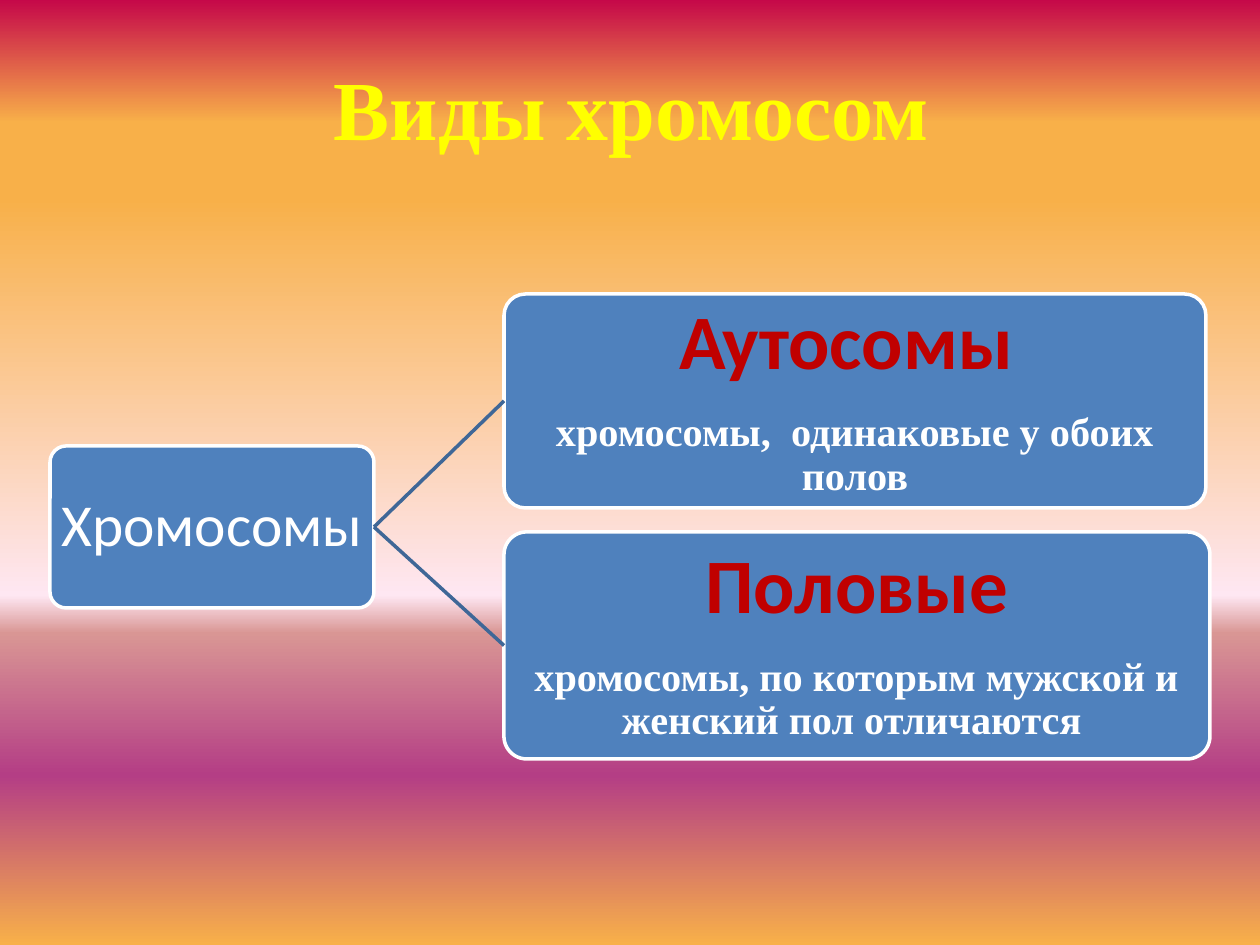
from lxml.etree import SubElement
from pptx import Presentation
from pptx.dml.color import RGBColor
from pptx.enum.shapes import MSO_CONNECTOR, MSO_SHAPE
from pptx.enum.text import MSO_ANCHOR, PP_ALIGN
from pptx.oxml.ns import qn
from pptx.util import Pt

EMU_PER_PX = 914400 / 126
WHITE = RGBColor(0xFF, 0xFF, 0xFF)
BLUE = RGBColor(0x4F, 0x81, 0xBD)
LINK_BLUE = RGBColor(0x3F, 0x67, 0x97)
RED = RGBColor(0xC0, 0x00, 0x00)
YELLOW = RGBColor(0xFF, 0xFF, 0x00)
SUNSET = [
    (0, RGBColor(0xFC, 0x9F, 0xCB)),
    (0, RGBColor(0xC5, 0x08, 0x49)),
    (13, RGBColor(0xF8, 0xB0, 0x49)),
    (21, RGBColor(0xF8, 0xB0, 0x49)),
    (63, RGBColor(0xFE, 0xE7, 0xF2)),
    (67, RGBColor(0xD9, 0x96, 0x94)),
    (82, RGBColor(0xB4, 0x3E, 0x85)),
    (100, RGBColor(0xF8, 0xB0, 0x49)),
]
SANS = "Calibri"
SERIF = "Times New Roman"


def px(length):
    return round(length * EMU_PER_PX)


def write(paragraph, text, size, font=SANS, color=WHITE, bold=False):
    paragraph.alignment = PP_ALIGN.CENTER
    run = paragraph.add_run()
    run.text = text
    run.font.size = Pt(size)
    run.font.name = font
    run.font.color.rgb = color
    run.font.bold = bold


class Diagram:
    line_width = Pt(2)
    corner = 0.1
    line_spacing = 0.9
    space_ratio = 0.35

    def __init__(self, slide):
        self.slide = slide

    def background(self, stops):
        fill = self.slide.background.fill
        fill.gradient()
        fill.gradient_angle = 270
        stop_list = self.slide.element.find(".//" + qn("a:gsLst"))
        for stop in list(stop_list):
            stop_list.remove(stop)
        for percent, color in stops:
            stop = SubElement(stop_list, qn("a:gs"), pos=str(percent * 1000))
            SubElement(stop, qn("a:srgbClr"), val=str(color))

    def title(self, text, left, top, width, height):
        title = self.slide.shapes.title
        title.left, title.top = px(left), px(top)
        title.width, title.height = px(width), px(height)
        title.text_frame.vertical_anchor = MSO_ANCHOR.BOTTOM
        write(title.text_frame.paragraphs[0], text, 48, SERIF, YELLOW, True)

    def box(self, left, top, width, height, inset):
        box = self.slide.shapes.add_shape(
            MSO_SHAPE.ROUNDED_RECTANGLE, px(left), px(top), px(width), px(height))
        box.shadow.inherit = False
        box.adjustments[0] = self.corner
        box.fill.solid()
        box.fill.fore_color.rgb = BLUE
        box.line.color.rgb = WHITE
        box.line.width = self.line_width
        frame = box.text_frame
        frame.word_wrap = True
        frame.vertical_anchor = MSO_ANCHOR.MIDDLE
        frame.margin_left = frame.margin_right = px(inset)
        frame.margin_top = frame.margin_bottom = px(inset)
        return box

    def spacing(self, paragraph, size):
        paragraph.line_spacing = self.line_spacing
        paragraph.space_after = Pt(round(size * self.space_ratio))

    def root(self, text, left, top, width, height):
        box = self.box(left, top, width, height, 2)
        label = box.text_frame.paragraphs[0]
        self.spacing(label, 34)
        write(label, text, 34)
        return box

    def branch(self, heading, meaning, left, top, width, height):
        box = self.box(left, top, width, height, 4)
        name = box.text_frame.paragraphs[0]
        self.spacing(name, 44)
        write(name, heading, 44, color=RED, bold=True)
        definition = box.text_frame.add_paragraph()
        self.spacing(definition, 23)
        write(definition, meaning, 23, SERIF, bold=True)
        return box

    def link(self, parent, child):
        link = self.slide.shapes.add_connector(MSO_CONNECTOR.STRAIGHT, 0, 0, 0, 0)
        link.begin_connect(parent, 3)
        link.end_connect(child, 1)
        link.line.color.rgb = LINK_BLUE
        link.line.width = self.line_width
        SubElement(link.element.spPr, qn("a:effectLst"))


def main():
    deck = Presentation()
    deck.slide_width, deck.slide_height = px(1260), px(945)
    diagram = Diagram(deck.slides.add_slide(deck.slide_layouts[5]))
    diagram.background(SUNSET)
    diagram.title("Виды хромосом ", 101, 49, 1082, 115)
    chromosomes = diagram.root("Хромосомы", 50, 446, 324, 162)
    autosomes = diagram.branch(
        "Аутосомы ", "хромосомы,  одинаковые у обоих полов", 504, 294, 702, 214)
    sex_chromosomes = diagram.branch(
        "Половые", "хромосомы, по которым мужской и женский пол отличаются ",
        504, 532, 706, 227)
    for kind in (autosomes, sex_chromosomes):
        diagram.link(chromosomes, kind)
    deck.save("out.pptx")


if __name__ == "__main__":
    main()
